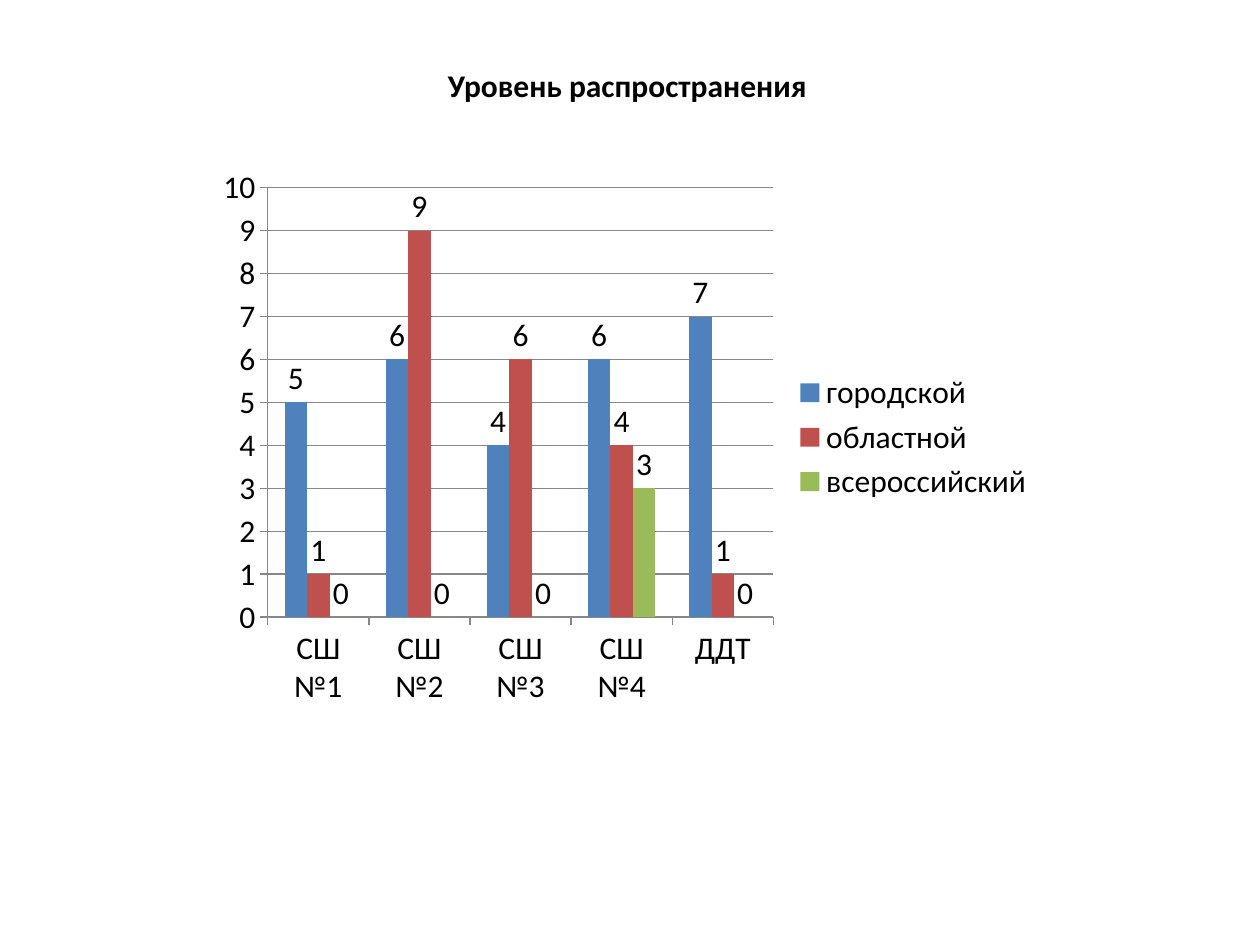
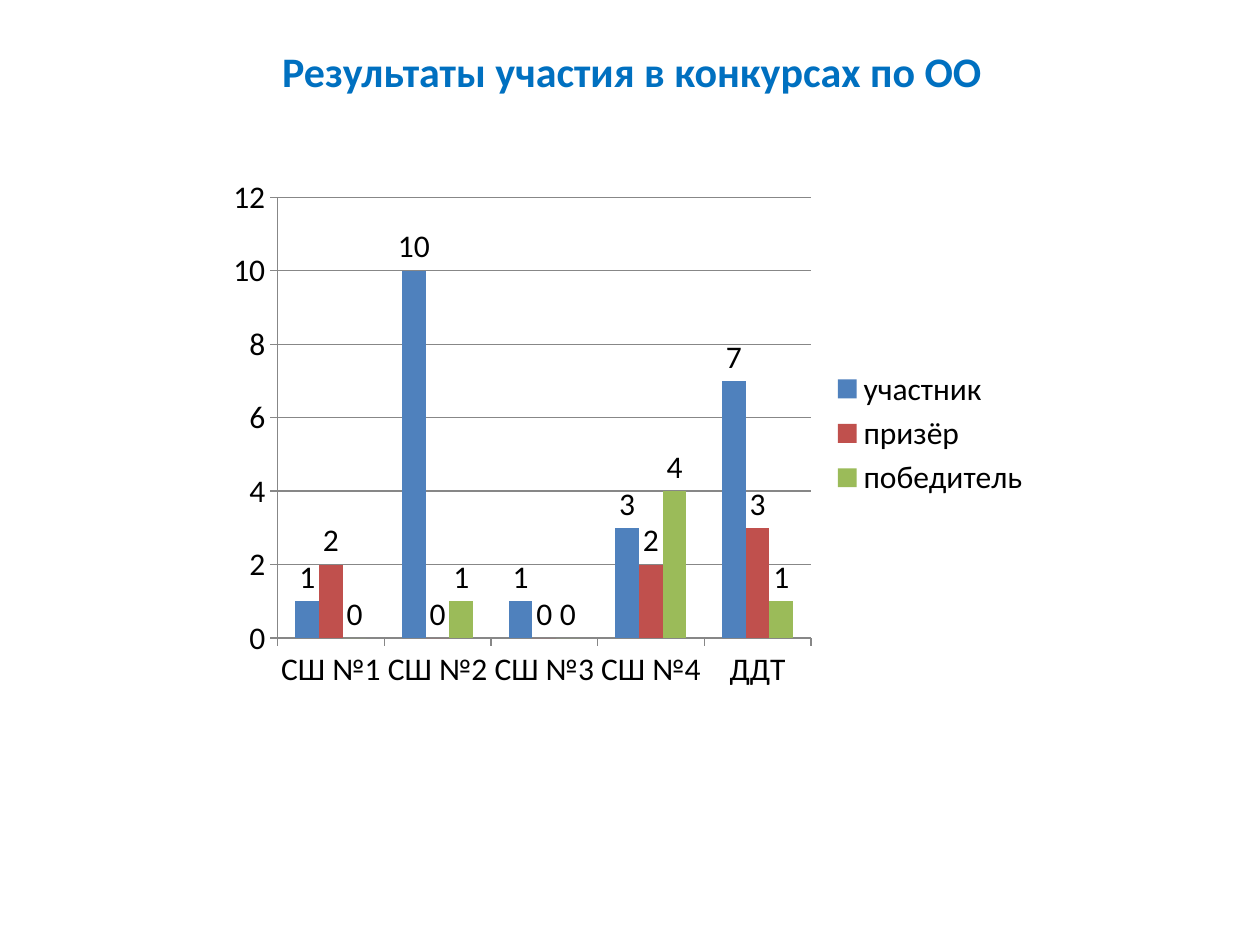
from pptx import Presentation
from pptx.chart.data import CategoryChartData as Data
from pptx.dml.color import RGBColor
from pptx.enum.chart import XL_CHART_TYPE as Kind, XL_LABEL_POSITION as Spot
from pptx.enum.chart import XL_LEGEND_POSITION as Side, XL_TICK_MARK as Tick
from pptx.enum.text import MSO_ANCHOR as Anchor, PP_ALIGN as Align
from pptx.util import Inches, Pt

FONT = "Calibri"
BLACK, BLUE, GREY = "000000", "0070C0", "878787"
FILLS = ["4F81BD", "C0504D", "9BBB59"]
CATS = ["СШ №1", "СШ №2", "СШ №3", "СШ №4", "ДДТ"]

SLIDES = [
    {
        "title": "Уровень распространения",
        "size": 18, "color": BLACK, "box": (3.44, 0.47, 3.08, 0.4),
        "area": (1.64, 1.25, 6.67, 4.44), "top": 10, "step": 1,
        "rows": {
            "городской": (5, 6, 4, 6, 7),
            "областной": (1, 9, 6, 4, 1),
            "всероссийский": (0, 0, 0, 3, 0),
        },
    },
    {
        "title": "Результаты участия в конкурсах по ОО",
        "size": 24, "color": BLUE, "box": (2.11, 0.31, 5.81, 0.5),
        "area": (1.72, 1.33, 6.56, 4.22), "top": 12, "step": 2,
        "rows": {
            "участник": (1, 10, 1, 3, 7),
            "призёр": (2, 0, 0, 2, 3),
            "победитель": (0, 1, 0, 4, 1),
        },
    },
]


def paint(color, value):
    color.rgb = RGBColor.from_string(value)


def style(font, size, color, bold=False):
    font.name = FONT
    font.size = Pt(size)
    font.bold = bold
    paint(font.color, color)


deck = Presentation()
deck.slide_width, deck.slide_height = Inches(10), Inches(7.5)

for item in SLIDES:
    slide = deck.slides.add_slide(deck.slide_layouts[5])

    title = slide.shapes.title
    title.left, title.top, title.width, title.height = map(Inches, item["box"])
    frame = title.text_frame
    frame.word_wrap = False
    frame.vertical_anchor = Anchor.TOP
    para = frame.paragraphs[0]
    para.alignment = Align.CENTER
    run = para.add_run()
    run.text = item["title"]
    style(run.font, item["size"], item["color"], True)

    data = Data()
    data.categories = CATS
    for name, vals in item["rows"].items():
        data.add_series(name, vals)
    area = map(Inches, item["area"])
    chart = slide.shapes.add_chart(Kind.COLUMN_CLUSTERED, *area, data).chart
    style(chart.font, 18, BLACK)
    chart.has_title = False
    chart.has_legend = True
    chart.legend.position = Side.RIGHT
    chart.legend.include_in_layout = False

    plot = chart.plots[0]
    plot.gap_width = 150
    plot.vary_by_categories = False
    for bars, fill in zip(plot.series, FILLS):
        bars.format.fill.solid()
        paint(bars.format.fill.fore_color, fill)
        labels = bars.data_labels
        labels.show_value = True
        labels.position = Spot.OUTSIDE_END

    scale = chart.value_axis
    scale.minimum_scale, scale.maximum_scale = 0, item["top"]
    scale.major_unit = item["step"]
    scale.has_major_gridlines = True
    for axis in (chart.category_axis, scale):
        axis.major_tick_mark = Tick.OUTSIDE
        paint(axis.format.line.color, GREY)
    paint(scale.major_gridlines.format.line.color, GREY)

deck.save("out.pptx")
